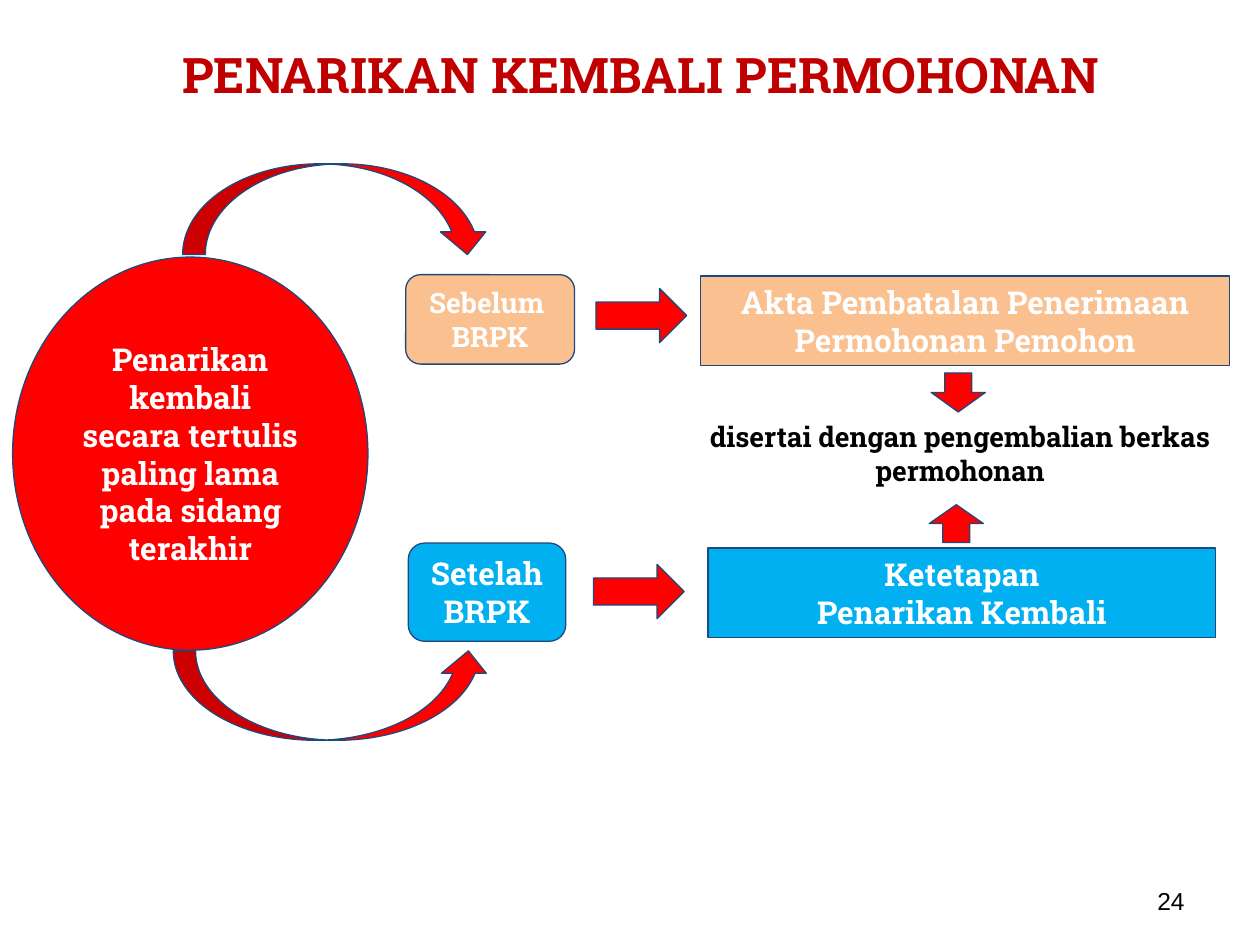
import pptx
import pptx.util
import pptx.dml.color
import pptx.enum.shapes
import pptx.enum.text

Inches = pptx.util.Inches
SHAPE = pptx.enum.shapes.MSO_SHAPE
ALIGN = pptx.enum.text.PP_ALIGN
RED, ORANGE, BLUE, NAVY = "FF0000", "FAC090", "00B0F0", "1F497D"
WHITE, BLACK = "FFFFFF", "000000"


def rgb(value):
    return pptx.dml.color.RGBColor.from_string(value)


def write(sp, lines, size, color, name="Roboto Slab", bold=True,
          align=ALIGN.CENTER, wrap=True):
    tf = sp.text_frame
    tf.word_wrap = wrap
    tf.vertical_anchor = pptx.enum.text.MSO_ANCHOR.MIDDLE
    for i, line in enumerate(lines):
        p = tf.add_paragraph() if i else tf.paragraphs[0]
        p.alignment = align
        r = p.add_run()
        r.text = line
        fmt = {"name": name, "size": pptx.util.Pt(size), "bold": bold}
        for key, value in fmt.items():
            setattr(r.font, key, value)
        r.font.color.rgb = rgb(color)


prs = pptx.Presentation()
prs.slide_width, prs.slide_height = Inches(10), Inches(7.5)
s = prs.slides.add_slide(prs.slide_layouts[6])

# Shapes: kind, box, rotation, fill, lines, text size, wrap
shapes = [
    # Request and its two stages
    (SHAPE.OVAL, (0.1, 2.04, 2.82, 3.12), 0, RED,
     ["Penarikan kembali secara tertulis paling lama pada sidang terakhir"], 18, True),
    (SHAPE.ROUNDED_RECTANGLE, (3.22, 2.18, 1.34, 0.71), 0, ORANGE,
     ["Sebelum ", "BRPK"], 16, False),
    (SHAPE.ROUNDED_RECTANGLE, (3.24, 4.31, 1.25, 0.78), 0, BLUE,
     ["Setelah", "BRPK"], 18, False),
    # Resulting documents
    (SHAPE.RECTANGLE, (5.56, 2.19, 4.2, 0.71), 0, ORANGE,
     ["Akta Pembatalan Penerimaan Permohonan Pemohon"], 18, True),
    (SHAPE.RECTANGLE, (5.62, 4.35, 4.03, 0.71), 0, BLUE,
     ["Ketetapan", "Penarikan Kembali"], 18, True),
    # Block arrows
    (SHAPE.RIGHT_ARROW, (4.73, 2.29, 0.72, 0.43), 0, RED, [], 18, True),
    (SHAPE.RIGHT_ARROW, (4.71, 4.48, 0.72, 0.43), 0, RED, [], 18, True),
    (SHAPE.RIGHT_ARROW, (7.45, 2.9, 0.31, 0.43), 90, RED, [], 18, True),
    (SHAPE.RIGHT_ARROW, (7.44, 3.94, 0.3, 0.43), 270, RED, [], 18, True),
    # Curved arrows
    (SHAPE.CURVED_RIGHT_ARROW, (2.28, 4.26, 0.71, 2.52), 270, RED, [], 18, True),
    (SHAPE.CURVED_LEFT_ARROW, (2.31, 0.44, 0.72, 2.44), 270, RED, [], 18, True),
]
for kind, box, rotation, fill, lines, size, wrap in shapes:
    sp = s.shapes.add_shape(kind, *map(Inches, box))
    sp.rotation = rotation
    sp.shadow.inherit = False
    sp.fill.solid()
    sp.fill.fore_color.rgb = rgb(fill)
    sp.line.color.rgb = rgb(NAVY)
    sp.line.width = pptx.util.Pt(0.75)
    write(sp, lines, size, WHITE, wrap=wrap)

# Title, note and page number
texts = [
    ((0.38, 0.3, 9.41, 0.57), "PENARIKAN KEMBALI PERMOHONAN",
     {"size": 28, "color": "C00000"}),
    ((5.43, 3.28, 4.38, 0.64), "disertai dengan pengembalian berkas permohonan",
     {"size": 16, "color": BLACK}),
    ((7.17, 6.95, 2.33, 0.4), "24",
     {"size": 14, "color": BLACK, "name": "Arial", "bold": False, "align": ALIGN.RIGHT}),
]
for box, text, fmt in texts:
    write(s.shapes.add_textbox(*map(Inches, box)), [text], **fmt)

prs.save("out.pptx")
